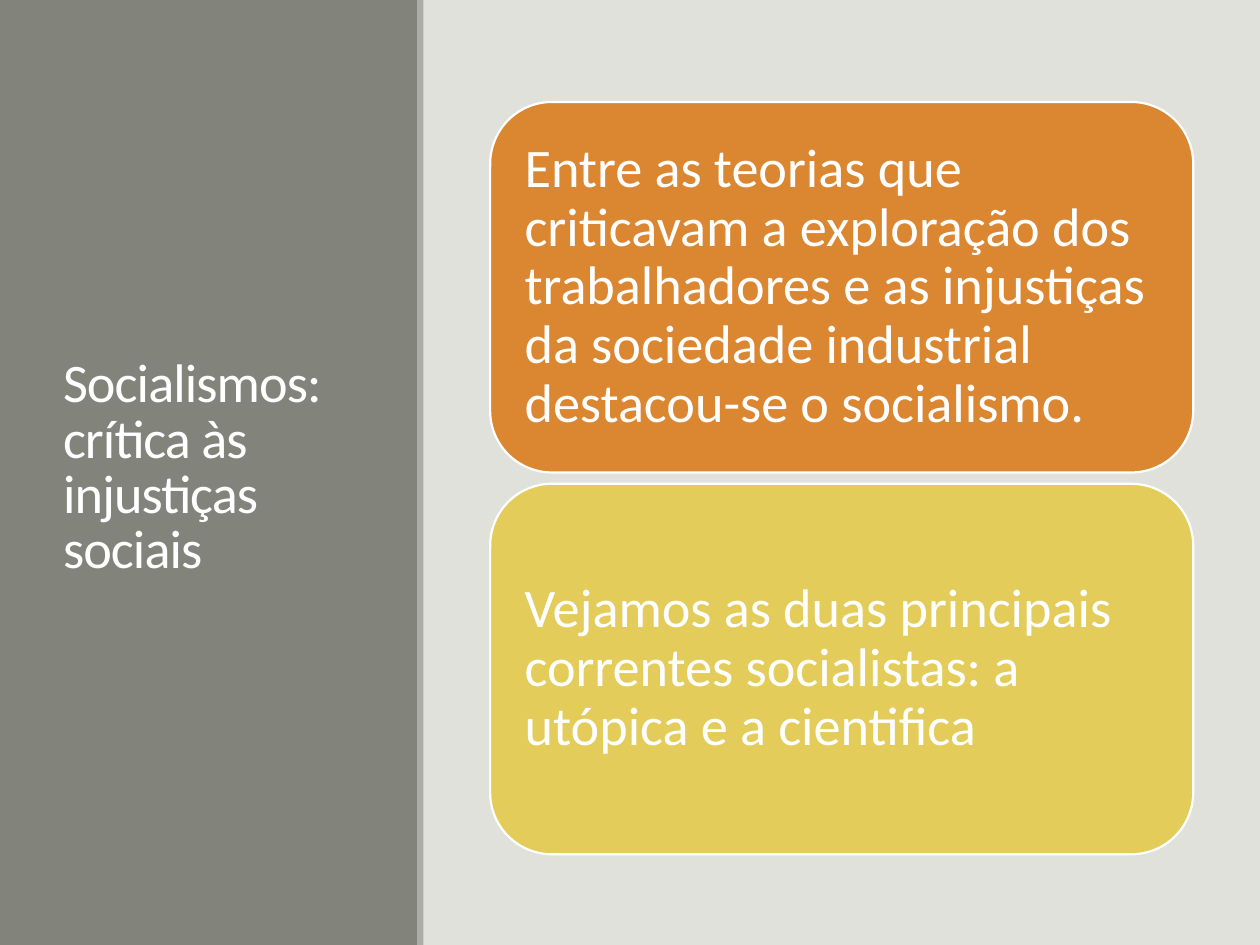
"""Build a slide with a title side panel and two stacked text cards."""
import pptx
import pptx.dml.color
import pptx.enum.shapes
import pptx.enum.text
import pptx.util

Inches = pptx.util.Inches
Shape = pptx.enum.shapes.MSO_SHAPE

TITLE = "Socialismos: crítica às injustiças sociais"
CARDS = [
    ("Entre as teorias que criticavam a exploração dos trabalhadores "
     "e as injustiças da sociedade industrial destacou-se o socialismo.", "DB8631"),
    ("Vejamos as duas principais correntes socialistas: "
     "a utópica e a cientifica", "E3CC5A"),
]
PANELS = [((0, 0, 3.32, 7.5), "82847C"), ((3.31, 0, 0.05, 7.5), "ACADA8")]
BACKGROUND, WHITE = "E1E1DB", "FFFFFF"
CARD_LEFT, CARD_TOP, CARD_WIDTH, CARD_HEIGHT, CARD_GAP = 3.89, 0.81, 5.58, 2.94, 0.09
FRAME = {
    "word_wrap": True,
    "auto_size": pptx.enum.text.MSO_AUTO_SIZE.NONE,
    "vertical_anchor": pptx.enum.text.MSO_ANCHOR.MIDDLE,
}
MARGINS = dict.fromkeys(
    ("margin_left", "margin_top", "margin_right", "margin_bottom"), Inches(0.13))
FONT = {"name": "Calibri", "size": pptx.util.Pt(31)}


def set_all(obj, values):
    for name, value in values.items():
        setattr(obj, name, value)


def paint(fill, color):
    fill.solid()
    fill.fore_color.rgb = pptx.dml.color.RGBColor.from_string(color)


def add_shape(slide, kind, box, color):
    sp = slide.shapes.add_shape(kind, *map(Inches, box))
    sp.shadow.inherit = False
    paint(sp.fill, color)
    sp.line.fill.background()
    return sp


def write(sp, text, line_spacing, **frame):
    tf = sp.text_frame
    set_all(tf, FRAME | frame)
    p = tf.paragraphs[0]
    set_all(p, {"alignment": pptx.enum.text.PP_ALIGN.LEFT, "line_spacing": line_spacing})
    r = p.add_run()
    r.text = text
    set_all(r.font, FONT)
    paint(r.font.fill, WHITE)
    return r


def main():
    prs = pptx.Presentation()
    set_all(prs, {"slide_width": Inches(10), "slide_height": Inches(7.5)})
    slide = prs.slides.add_slide(prs.slide_layouts[5])
    paint(slide.background.fill, BACKGROUND)

    for box, color in PANELS:
        add_shape(slide, Shape.RECTANGLE, box, color)

    title = slide.shapes.title
    set_all(title, {"left": Inches(0.4), "top": Inches(0.57),
                    "width": Inches(2.53), "height": Inches(6.31)})
    r = write(title, TITLE, 0.85)
    r.font._element.set("spc", "-50")
    slide.shapes._spTree.append(title._element)

    for i, (text, color) in enumerate(CARDS):
        top = CARD_TOP + i * (CARD_HEIGHT + CARD_GAP)
        sp = add_shape(slide, Shape.ROUNDED_RECTANGLE,
                       (CARD_LEFT, top, CARD_WIDTH, CARD_HEIGHT), color)
        paint(sp.line.fill, WHITE)
        sp.line.width = pptx.util.Pt(1.25)
        write(sp, text, 0.9, **MARGINS)

    prs.save("out.pptx")


if __name__ == "__main__":
    main()
